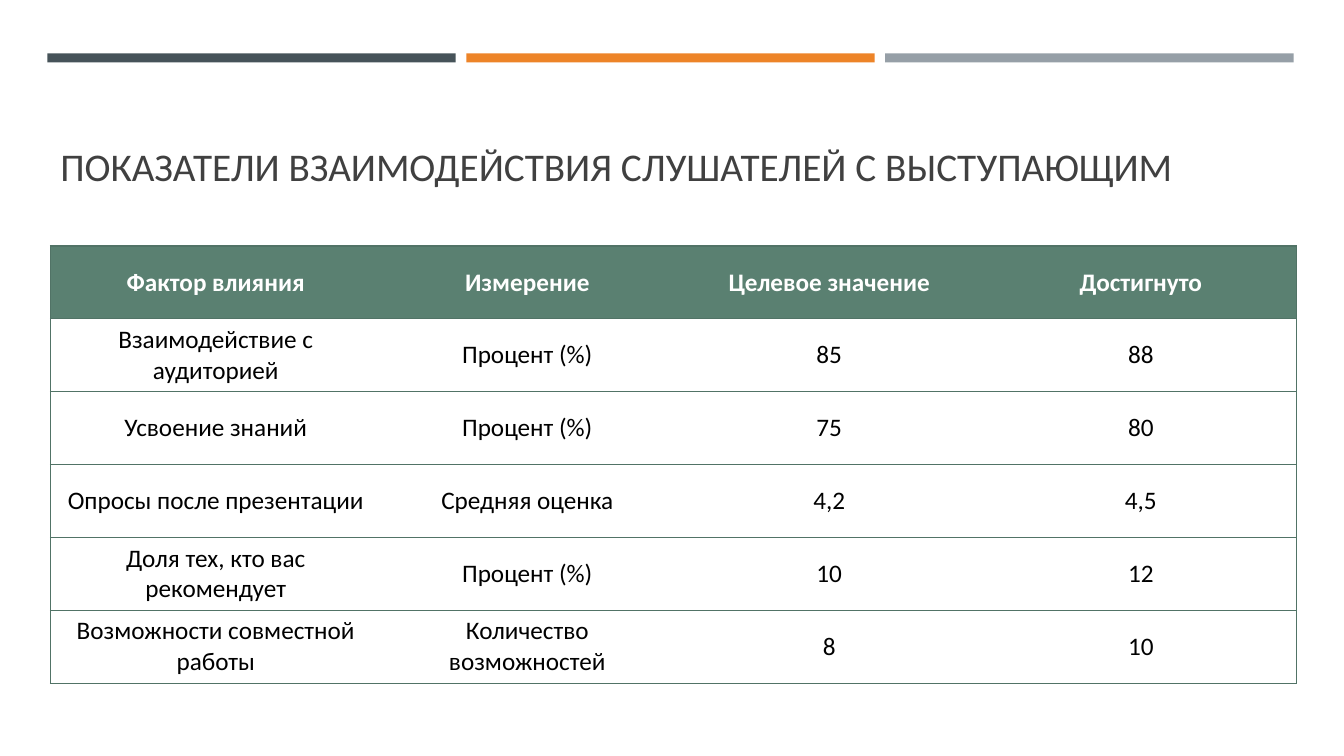
from dataclasses import dataclass

from lxml import etree
from pptx import Presentation
from pptx.dml.color import RGBColor
from pptx.enum.shapes import MSO_SHAPE
from pptx.enum.text import MSO_ANCHOR, PP_ALIGN
from pptx.oxml.ns import qn
from pptx.util import Inches, Pt

RECTANGLE = MSO_SHAPE.RECTANGLE
CENTER, LEFT = PP_ALIGN.CENTER, PP_ALIGN.LEFT
MIDDLE, BOTTOM = MSO_ANCHOR.MIDDLE, MSO_ANCHOR.BOTTOM


@dataclass(frozen=True)
class Theme:
    font: str = "Calibri"
    title_size: int = 28
    table_size: int = 18
    title: str = "404040"
    text: str = "000000"
    white: str = "FFFFFF"
    header: str = "5A8071"
    border: str = "517366"
    bars: tuple = ("465359", "ED8428", "969FA7")


THEME = Theme()

TITLE = "ПОКАЗАТЕЛИ ВЗАИМОДЕЙСТВИЯ СЛУШАТЕЛЕЙ С ВЫСТУПАЮЩИМ"
COLUMN_WIDTHS = (3.28, 2.9, 3.09, 3.09)
ROW_HEIGHT = 0.723
ROWS = (
    ("Фактор влияния", "Измерение", "Целевое значение", "Достигнуто"),
    ("Взаимодействие с аудиторией", "Процент (%)", "85", "88"),
    ("Усвоение знаний", "Процент (%)", "75", "80"),
    ("Опросы после презентации", "Средняя оценка", "4,2", "4,5"),
    ("Доля тех, кто вас рекомендует", "Процент (%)", "10", "12"),
    ("Возможности совместной работы", "Количество возможностей", "8", "10"),
)


def write(tf, text, size, color, bold=False, align=LEFT):
    p = tf.paragraphs[0]
    p.alignment = align
    r = p.add_run()
    r.text = text
    r.font.name = THEME.font
    r.font.size = Pt(size)
    r.font.bold = bold
    r.font.color.rgb = RGBColor.from_string(color)


def add_bars(slide):
    for i, color in enumerate(THEME.bars):
        sp = slide.shapes.add_shape(RECTANGLE, Inches(0.47 + i * 4.155), Inches(0.53),
                                    Inches(4.05), Inches(0.09))
        sp.shadow.inherit = False
        sp.fill.solid()
        sp.fill.fore_color.rgb = RGBColor.from_string(color)
        sp.line.fill.background()


def add_title(slide):
    box = slide.shapes.add_textbox(Inches(0.5), Inches(0.77), Inches(12.33), Inches(1.16))
    tf = box.text_frame
    tf.word_wrap = True
    tf.vertical_anchor = BOTTOM
    write(tf, TITLE, THEME.title_size, THEME.title)


def set_borders(cell, visible):
    """Draw the sides named in visible (L, R, T, B) and clear the others."""
    tc_pr = cell._tc.get_or_add_tcPr()
    for i, side in enumerate("LRTB"):
        ln = etree.Element(qn(f"a:ln{side}"), w=str(Pt(1)))
        if side in visible:
            fill = etree.SubElement(ln, qn("a:solidFill"))
            etree.SubElement(fill, qn("a:srgbClr"), val=THEME.border)
        else:
            etree.SubElement(ln, qn("a:noFill"))
        tc_pr.insert(i, ln)


def fill_cell(cell, text, is_header, sides):
    cell.vertical_anchor = MIDDLE
    cell.fill.solid()
    cell.fill.fore_color.rgb = RGBColor.from_string(THEME.header if is_header else THEME.white)
    write(cell.text_frame, text, THEME.table_size,
          THEME.white if is_header else THEME.text, is_header, CENTER)
    set_borders(cell, sides)


def add_metrics_table(slide):
    last = len(COLUMN_WIDTHS) - 1
    table = slide.shapes.add_table(
        len(ROWS), len(COLUMN_WIDTHS), Inches(0.5), Inches(2.44),
        Inches(sum(COLUMN_WIDTHS)), Inches(ROW_HEIGHT * len(ROWS))).table
    table.horz_banding = False
    for column, width in zip(table.columns, COLUMN_WIDTHS):
        column.width = Inches(width)
    for i, values in enumerate(ROWS):
        table.rows[i].height = Inches(ROW_HEIGHT)
        for j, text in enumerate(values):
            sides = "TB" + ("L" if j == 0 else "") + ("R" if j == last else "")
            fill_cell(table.cell(i, j), text, i == 0, sides)


def main():
    prs = Presentation()
    prs.slide_width, prs.slide_height = Inches(13.33), Inches(7.5)
    slide = prs.slides.add_slide(prs.slide_layouts[6])
    add_bars(slide)
    add_title(slide)
    add_metrics_table(slide)
    prs.save("out.pptx")


if __name__ == "__main__":
    main()
